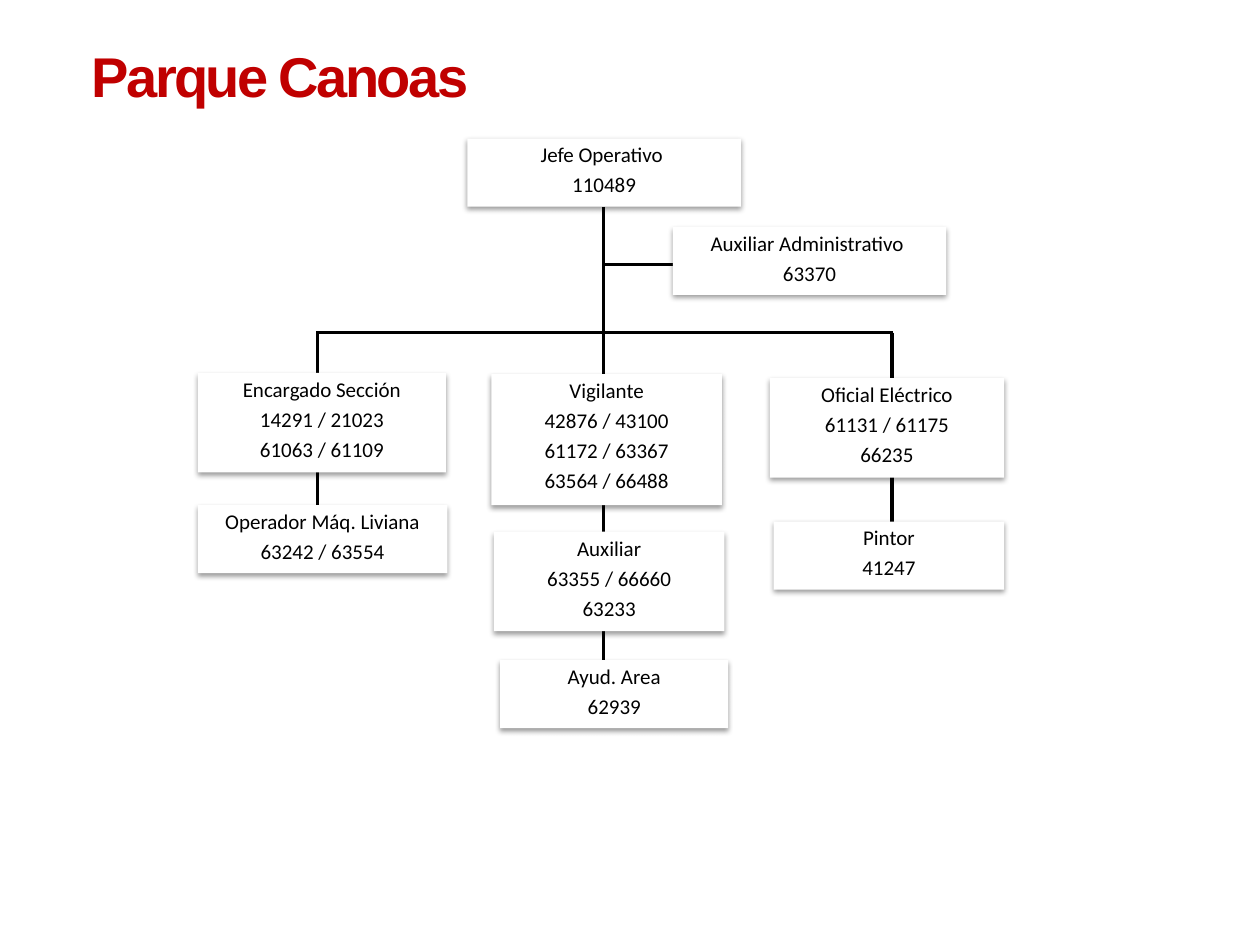
import pptx
import pptx.dml.color
import pptx.enum.shapes
import pptx.enum.text
import pptx.oxml.ns
import pptx.util
from lxml import etree

Inches = pptx.util.Inches
Pt = pptx.util.Pt
qn = pptx.oxml.ns.qn

COLORS = {"title": "C00000", "ink": "000000", "box": "FFFFFF"}

BOX_HEIGHTS = {2: 0.54, 3: 0.79, 4: 1.04}

POSTS = [
    (3.71, 1.10, 2.17, ["Jefe Operativo ", "110489"]),
    (5.34, 1.80, 2.17, ["Auxiliar Administrativo ", "63370"]),
    (1.57, 2.96, 1.97, ["Encargado Sección", "14291 / 21023", "61063 / 61109"]),
    (1.57, 4.01, 1.98, ["Operador Máq. Liviana", "63242 / 63554"]),
    (3.90, 2.97, 1.83, ["Vigilante", "42876 / 43100", "61172 / 63367", "63564 / 66488"]),
    (3.92, 4.22, 1.83, ["Auxiliar", "63355 / 66660", "63233"]),
    (3.97, 5.24, 1.81, ["Ayud. Area", "62939"]),
    (6.11, 3.00, 1.86, ["Oficial Eléctrico", "61131 / 61175", "66235"]),
    (6.14, 4.14, 1.83, ["Pintor", "41247"]),
]

BRANCHES = [
    (2.52, 2.63, 2.52, 4.41),
    (7.08, 2.64, 7.08, 4.21),
    (4.79, 1.64, 4.79, 5.34),
    (2.53, 2.64, 7.09, 2.64),
    (4.79, 2.10, 5.34, 2.10),
]


def color(name):
    return pptx.dml.color.RGBColor.from_string(COLORS[name])


def style_font(font, name, size, color_name, bold=False):
    font.name = name
    font.size = Pt(size)
    font.bold = bold
    font.color.rgb = color(color_name)


def add_title(page, text):
    box = page.shapes.add_textbox(Inches(0.63), Inches(0.28), Inches(3.54), Inches(0.64))
    frame = box.text_frame
    frame.word_wrap = False
    frame.auto_size = pptx.enum.text.MSO_AUTO_SIZE.SHAPE_TO_FIT_TEXT
    para = frame.paragraphs[0]
    span = para.add_run()
    span.text = text
    style_font(span.font, "Arial", 32, "title", bold=True)
    span.font._element.set("spc", "-150") if hasattr(span.font, "_element") else span._r.get_or_add_rPr().set("spc", "-150")


def add_branch(page, x1, y1, x2, y2):
    branch = page.shapes.add_connector(
        pptx.enum.shapes.MSO_CONNECTOR.STRAIGHT,
        Inches(x1), Inches(y1), Inches(x2), Inches(y2),
    )
    branch.line.color.rgb = color("ink")
    branch.line.width = Pt(2)
    etree.SubElement(branch._element.spPr, qn("a:effectLst"))


def add_shadow(box):
    box.shadow.inherit = False
    effects = box._element.spPr.find(qn("a:effectLst"))
    shadow = etree.SubElement(
        effects, qn("a:outerShdw"), blurRad=str(Pt(3.1)), dist=str(Pt(1.6)),
        dir="5400000", rotWithShape="0",
    )
    tint = etree.SubElement(shadow, qn("a:srgbClr"), val=COLORS["ink"])
    etree.SubElement(tint, qn("a:alpha"), val="38000")


def style_post_line(para):
    para.alignment = pptx.enum.text.PP_ALIGN.CENTER
    para.line_spacing = 0.9
    after = etree.SubElement(para._p.get_or_add_pPr(), qn("a:spcAft"))
    etree.SubElement(after, qn("a:spcPct"), val="35000")
    style_font(para.font, "Calibri", 12, "ink")


def add_post(page, left, top, width, lines):
    box = page.shapes.add_shape(
        pptx.enum.shapes.MSO_SHAPE.RECTANGLE,
        Inches(left), Inches(top), Inches(width), Inches(BOX_HEIGHTS[len(lines)]),
    )
    box.fill.solid()
    box.fill.fore_color.rgb = color("box")
    box.line.fill.background()
    add_shadow(box)
    frame = box.text_frame
    frame.word_wrap = True
    frame.auto_size = pptx.enum.text.MSO_AUTO_SIZE.SHAPE_TO_FIT_TEXT
    frame.vertical_anchor = pptx.enum.text.MSO_ANCHOR.TOP
    frame.text = "\n".join(lines)
    for para in frame.paragraphs:
        style_post_line(para)


def main():
    deck = pptx.Presentation()
    deck.slide_width = Inches(10)
    deck.slide_height = Inches(7.5)
    page = deck.slides.add_slide(deck.slide_layouts[6])
    add_title(page, "Parque Canoas")
    for branch in BRANCHES:
        add_branch(page, *branch)
    for post in POSTS:
        add_post(page, *post)
    deck.save("out.pptx")


if __name__ == "__main__":
    main()
